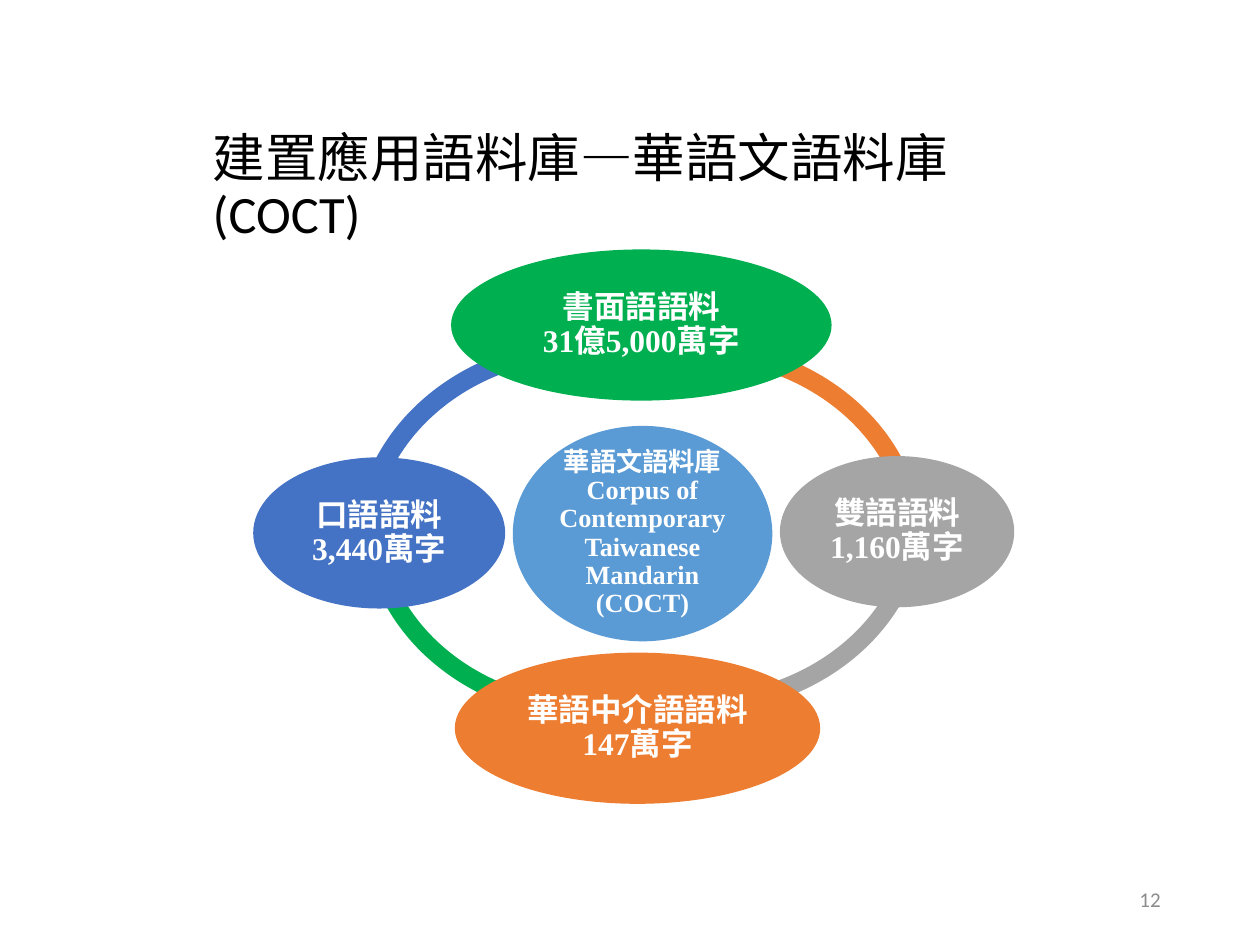
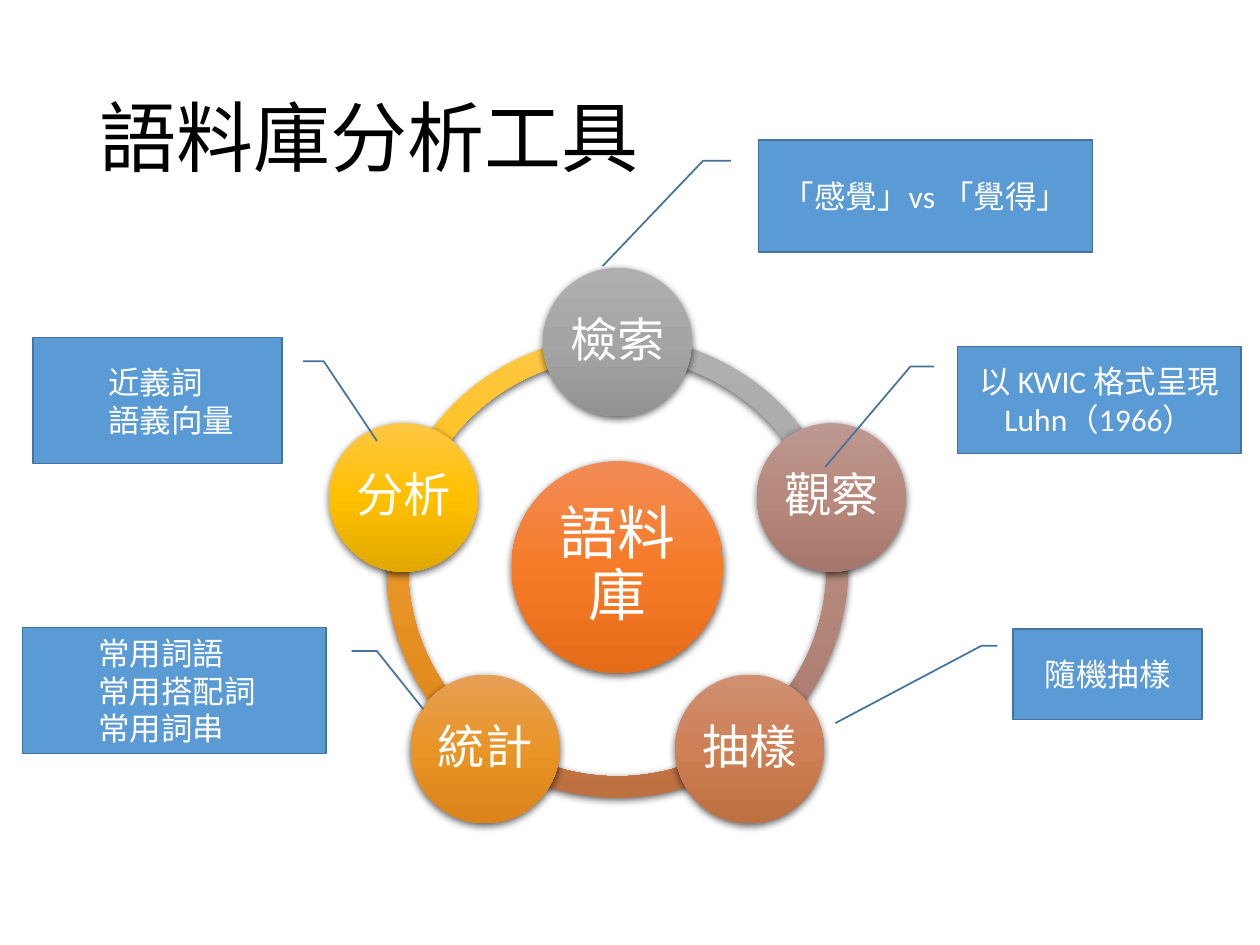
from dataclasses import dataclass
from math import cos, radians, sin

from pptx import Presentation
from pptx.dml.color import RGBColor
from pptx.enum.shapes import MSO_SHAPE as Shape
from pptx.enum.text import MSO_ANCHOR as Anchor, PP_ALIGN as Align
from pptx.oxml import parse_xml
from pptx.oxml.ns import nsdecls, qn
from pptx.util import Inches, Pt


@dataclass(frozen=True)
class Theme:
    latin: str = "Calibri"
    serif: str = "Times New Roman"
    cjk: str = "Noto Sans CJK SC"
    black: str = "000000"
    white: str = "FFFFFF"
    page: str = "8C8C8C"
    sky: str = "5B9BD5"
    edge: str = "43739E"
    blue: str = "4472C4"
    green: str = "00B050"
    gray: str = "A5A5A5"
    orange: str = "ED7D31"
    gray_fade: tuple = ("AFAFAF", "A5A5A5", "939393")
    rose_fade: tuple = ("BD9991", "B7887C", "A5776C")
    clay_fade: tuple = ("CF9072", "CE8056", "BD7040")
    amber_fade: tuple = ("E6A056", "E99427", "DA8419")
    gold_fade: tuple = ("FFC746", "FFC000", "E0A800")
    hub_fade: tuple = ("F18C57", "F67B28", "E56C19")
    title: int = 44
    long_title: int = 30
    hub: int = 33
    node: int = 27
    body: int = 18
    core: int = 15
    footer: int = 12


T = Theme()
WIDTH, HEIGHT = Inches(10), Inches(7.5)
COL, ROW = WIDTH / 100, HEIGHT / 75
ARC_WIDTH = 0.046


def grid(left, top, width, height):
    return [int(v * unit) for v, unit in
            zip((left, top, width, height), (COL, ROW, COL, ROW))]


def write(sp, text, size, color=T.white, font=T.latin, bold=False,
          align=Align.CENTER, spacing=0.9, indent=0, inset=0.1):
    tf = sp.text_frame
    tf.word_wrap = True
    tf.vertical_anchor = Anchor.MIDDLE
    tf.margin_left = tf.margin_right = Inches(inset)
    tf.margin_top = tf.margin_bottom = Inches(inset / 2)
    for i, line in enumerate(text.split("\n")):
        p = tf.add_paragraph() if i else tf.paragraphs[0]
        p.alignment = align
        p.line_spacing = spacing
        if indent:
            p._p.get_or_add_pPr().set("marL", str(Inches(indent)))
        r = p.add_run()
        r.text = line
        r.font.size = Pt(size)
        r.font.bold = bold
        r.font.color.rgb = RGBColor.from_string(color)
        r.font.name = font
        ea = parse_xml(f'<a:ea {nsdecls("a")} typeface="{T.cjk}"/>')
        r._r.rPr.find(qn("a:latin")).addnext(ea)


def add_text(slide, box, text, size, **fmt):
    write(slide.shapes.add_textbox(*grid(*box)), text, size, **fmt)


def add_title(slide, box, text, size):
    add_text(slide, box, text, size, color=T.black, align=Align.LEFT)


def add_shape(slide, kind, box, color, line=None):
    sp = slide.shapes.add_shape(kind, *grid(*box))
    sp.shadow.inherit = False
    if isinstance(color, tuple):
        fade(sp, color)
    else:
        sp.fill.solid()
        sp.fill.fore_color.rgb = RGBColor.from_string(color)
    if line:
        sp.line.color.rgb = RGBColor.from_string(line)
        sp.line.width = Pt(1)
    else:
        sp.line.fill.background()
    return sp


def fade(sp, colors):
    stops = "".join(f'<a:gs pos="{i * 50000}"><a:srgbClr val="{c}"/></a:gs>'
                    for i, c in enumerate(colors))
    fill = parse_xml(f'<a:gradFill {nsdecls("a")} rotWithShape="1"><a:gsLst>{stops}'
                     '</a:gsLst><a:lin ang="5400000" scaled="0"/></a:gradFill>')
    shade = parse_xml(f'<a:outerShdw {nsdecls("a")} blurRad="57150" dist="19050" '
                      'dir="5400000" algn="ctr" rotWithShape="0">'
                      '<a:srgbClr val="000000"><a:alpha val="63000"/></a:srgbClr>'
                      '</a:outerShdw>')
    props = sp._element.spPr
    props.find(qn("a:prstGeom")).addnext(fill)
    props.find(qn("a:effectLst")).append(shade)


def add_arc(slide, box, start, end, color):
    sp = add_shape(slide, Shape.BLOCK_ARC, box, color)
    for i, value in enumerate((start * 0.6, end * 0.6, ARC_WIDTH)):
        sp.adjustments[i] = value


def add_oval(slide, box, color, text, size, **fmt):
    sp = add_shape(slide, Shape.OVAL, box, color)
    write(sp, text, size, inset=0, **fmt)


def add_disc(slide, cx, cy, size, color, text, font_size):
    add_oval(slide, (cx - size / 2, cy - size / 2, size, size),
             color, text, font_size)


def add_callout(slide, box, text, tip=None, flip=False):
    sp = add_shape(slide, Shape.LINE_CALLOUT_2, box, T.sky, T.edge)
    if tip:
        sp.adjustments[4], sp.adjustments[5] = tip
    if flip:
        sp._element.spPr.find(qn("a:xfrm")).set("flipH", "1")
    write(sp, text, T.body, spacing=1.0, indent=0.5 if flip else 0,
          align=Align.LEFT if flip else Align.CENTER)


def build_corpus(slide):
    add_title(slide, (15.9, 11, 70.7, 7.9),
              "建置應用語料庫—華語文語料庫(COCT)", T.long_title)
    for box, start, end, color in (
            ((28.1, 26.9, 37.2, 32.8), 185.6, 278.58, T.blue),
            ((28.8, 25, 37.2, 32.2), 81.32, 173.39, T.green),
            ((36.3, 24.7, 37.2, 32), 6.52, 97.24, T.gray),
            ((36.1, 27, 37.2, 32.3), 262.81, 353.92, T.orange)):
        add_arc(slide, box, start, end, color)
    for box, color, text, size in (
            ((40.7, 33.8, 20.6, 17.1), T.sky,
             "華語文語料庫Corpus of Contemporary Taiwanese Mandarin (COCT)", T.core),
            ((36.1, 51.8, 29, 12), T.orange, "華語中介語語料\n147萬字", T.body),
            ((61.9, 36.2, 18.6, 12), T.gray, "雙語語料\n1,160萬字", T.body),
            ((35.8, 19.8, 30.2, 12), T.green, "書面語語料\n31億5,000萬字", T.body),
            ((20.1, 36.3, 20, 12), T.blue, "口語語料\n3,440萬字", T.body)):
        add_oval(slide, box, color, text, size, font=T.serif, bold=True)
    add_text(slide, (70.6, 69.5, 22.5, 4), "12", T.footer,
             color=T.page, align=Align.RIGHT)


def build_tools(slide):
    add_title(slide, (6.9, 4, 86.2, 14.5), "語料庫分析工具", T.title)
    cx, cy, ring, orbit = 49, 45, 36.6, 17.85
    nodes = (("檢索", T.gray_fade), ("觀察", T.rose_fade), ("抽樣", T.clay_fade),
             ("統計", T.amber_fade), ("分析", T.gold_fade))
    step = 360 / len(nodes)
    angles = [(270 + i * step) % 360 for i in range(len(nodes))]
    for angle, (_, color) in reversed(list(zip(angles, nodes))):
        add_arc(slide, (cx - ring / 2, cy - ring / 2, ring, ring),
                angle, (angle + step) % 360, color)
    add_disc(slide, cx, cy, 16.8, T.hub_fade, "語料庫", T.hub)
    for angle, (text, color) in zip(angles, nodes):
        add_disc(slide, cx + orbit * cos(radians(angle)),
                 cy + orbit * sin(radians(angle)), 11.8, color, text, T.node)
    add_callout(slide, (60.2, 11.1, 26.5, 8.9), "「感覺」vs 「覺得」")
    add_callout(slide, (76, 27.5, 22.5, 8.5), "以 KWIC 格式呈現\nLuhn（1966）")
    add_callout(slide, (80.4, 49.9, 15, 7.2), "隨機抽樣", tip=(1.04, -0.94))
    add_callout(slide, (1.8, 49.8, 24.1, 10), "常用詞語\n常用搭配詞\n常用詞串",
                tip=(0.65, -0.32), flip=True)
    add_callout(slide, (2.6, 26.8, 19.8, 10), "近義詞\n語義向量",
                tip=(0.82, -0.38), flip=True)


def main():
    prs = Presentation()
    prs.slide_width, prs.slide_height = WIDTH, HEIGHT
    for build in (build_corpus, build_tools):
        build(prs.slides.add_slide(prs.slide_layouts[6]))
    prs.save("out.pptx")


if __name__ == "__main__":
    main()
